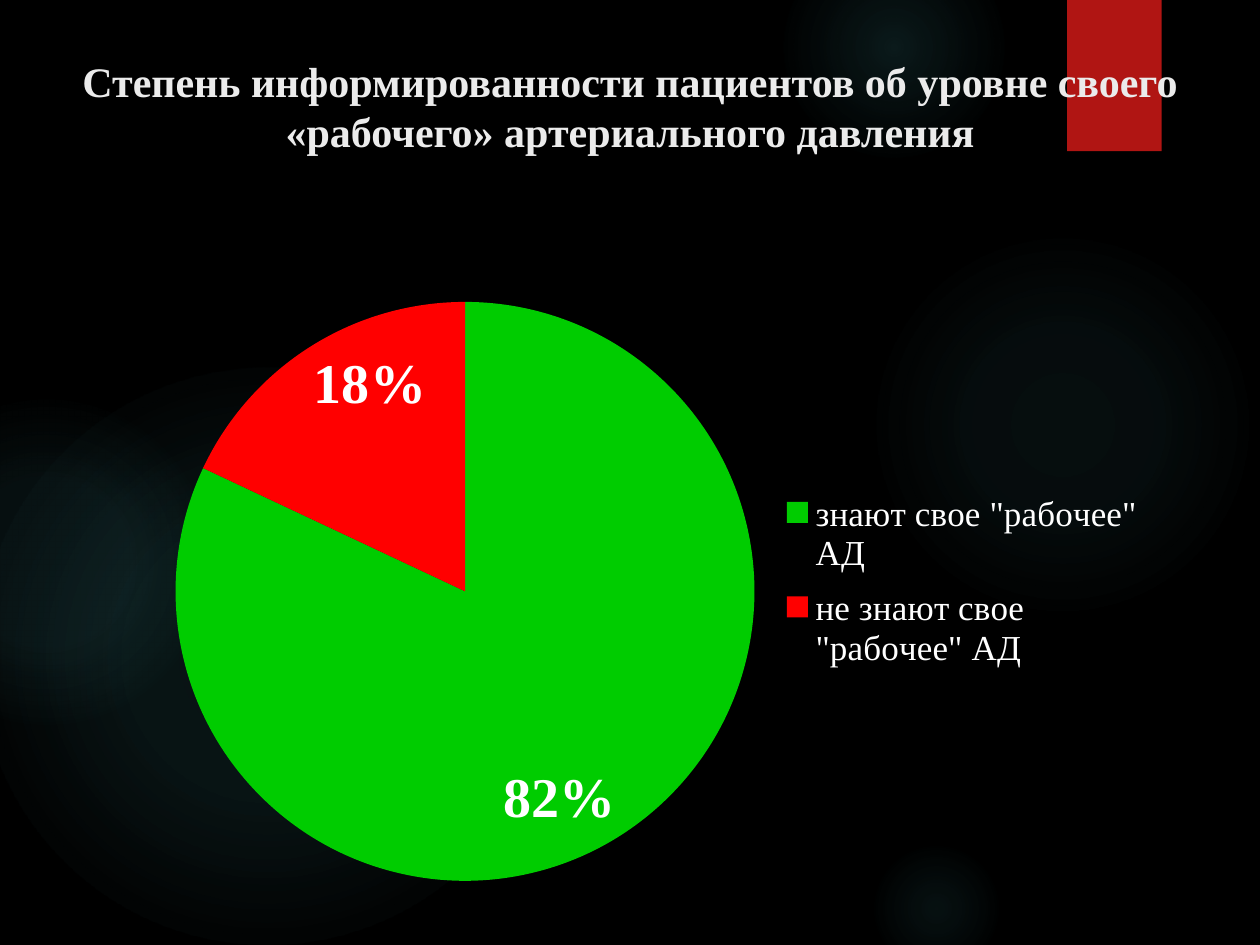
from lxml import etree
from pptx import Presentation
from pptx.chart.data import CategoryChartData
from pptx.dml.color import RGBColor
from pptx.enum.chart import XL_CHART_TYPE as ChartType
from pptx.enum.chart import XL_LABEL_POSITION as LabelPos
from pptx.enum.chart import XL_LEGEND_POSITION as LegendPos
from pptx.enum.shapes import MSO_SHAPE as Shape
from pptx.enum.text import MSO_ANCHOR, PP_ALIGN
from pptx.oxml import parse_xml
from pptx.oxml.ns import nsdecls, qn
from pptx.util import Inches, Pt

BLACK = RGBColor(0x00, 0x00, 0x00)
WHITE = RGBColor(0xFF, 0xFF, 0xFF)
TITLE_GREY = RGBColor(0xEB, 0xEB, 0xEB)
RED_TAB = RGBColor(0xB0, 0x15, 0x13)
GLOW = RGBColor(0x50, 0xB9, 0xC1)
GREEN = RGBColor(0x00, 0xCC, 0x00)
RED = RGBColor(0xFF, 0x00, 0x00)
SERIF = "Times New Roman"
SANS = "TeX Gyre Adventor"

TITLE = "Степень информированности пациентов об уровне своего «рабочего» артериального давления"
SLICES = [
    ('знают свое "рабочее" АД', 82, GREEN),
    ('не знают свое "рабочее" АД', 18, RED),
]
GLOWS = [
    (6.89, 1.83, 3.08, 7, 6, 69),
    (6.22, -0.5, 1.75, 14, 7, 73),
    (6.89, 6.67, 1.08, 9, 5, 66),
    (-0.17, 2.92, 4.58, 11, 10, 75),
    (-0.92, 3.17, 2.58, 8, 8, 72),
]


def set_font(font, color=WHITE, **formats):
    for name, value in formats.items():
        setattr(font, name, value)
    font.color.rgb = color


def add_plain_shape(slide, kind, left, top, width, height):
    sp = slide.shapes.add_shape(kind, Inches(left), Inches(top), Inches(width), Inches(height))
    sp.shadow.inherit = False
    sp.line.fill.background()
    return sp


def add_glow(slide, left, top, size, inner, middle, edge):
    sp = add_plain_shape(slide, Shape.OVAL, left, top, size, size)
    sp.fill.background()
    stops = "".join(
        f'<a:gs pos="{pos * 1000}"><a:srgbClr val="{GLOW}">'
        f'<a:alpha val="{alpha * 1000}"/></a:srgbClr></a:gs>'
        for pos, alpha in [(0, inner), (36, middle), (edge, 0)]
    )
    gradient = parse_xml(
        f'<a:gradFill {nsdecls("a")}><a:gsLst>{stops}</a:gsLst><a:path path="circle">'
        '<a:fillToRect l="50000" t="50000" r="50000" b="50000"/></a:path></a:gradFill>'
    )
    sp_pr = sp._element.spPr
    sp_pr.replace(sp_pr.find(qn("a:noFill")), gradient)


def add_red_tab(slide):
    sp = add_plain_shape(slide, Shape.RECTANGLE, 8.47, 0, 0.75, 1.2)
    sp.fill.solid()
    sp.fill.fore_color.rgb = RED_TAB


def set_layout(element, before, inner=False, **box):
    for old in element.findall(qn("c:layout")):
        element.remove(old)
    layout = etree.Element(qn("c:layout"))
    manual = etree.SubElement(layout, qn("c:manualLayout"))
    values = {"layoutTarget": "inner"} if inner else {}
    values.update(xMode="edge", yMode="edge", **box)
    for name, value in values.items():
        etree.SubElement(manual, qn(f"c:{name}")).set("val", str(value))
    element.find(qn(before)).addprevious(layout)


def add_pie(slide):
    data = CategoryChartData()
    data.categories = [name for name, _, _ in SLICES]
    data.add_series("Series 1", [value for _, value, _ in SLICES])
    chart = slide.shapes.add_chart(
        ChartType.PIE, Inches(0.7), Inches(1.87), Inches(8.67), Inches(5.23), data
    ).chart
    chart.has_title = False
    set_font(chart.font, size=Pt(10), name=SANS)

    chart.has_legend = True
    legend = chart.legend
    legend.position = LegendPos.RIGHT
    legend.include_in_layout = False
    set_font(legend.font, size=Pt(20), name=SERIF)

    plot = chart.plots[0]
    plot.vary_by_categories = True
    for i, (_, _, color) in enumerate(SLICES):
        fmt = plot.series[0].points[i].format
        fmt.fill.solid()
        fmt.fill.fore_color.rgb = color
        fmt.line.fill.background()

    labels = plot.series[0].data_labels
    formats = {
        "show_percentage": True,
        "show_value": False,
        "number_format": "0%",
        "number_format_is_linked": False,
        "position": LabelPos.INSIDE_END,
    }
    for name, value in formats.items():
        setattr(labels, name, value)
    set_font(labels.font, size=Pt(32), bold=True, name=SERIF)

    area = chart._chartSpace.chart.plotArea
    set_layout(area, "c:pieChart", True, x=0.08, y=0.1, w=0.53, h=0.88)
    set_layout(legend._element, "c:overlay", x=0.62, y=0.37, w=0.36, h=0.31)


def add_title(slide):
    sp = slide.shapes.title
    box = {"left": 0, "top": 0.39, "width": 10, "height": 1.21}
    for name, value in box.items():
        setattr(sp, name, Inches(value))
    tf = sp.text_frame
    tf.word_wrap = True
    tf.vertical_anchor = MSO_ANCHOR.TOP
    p = tf.paragraphs[0]
    p.alignment = PP_ALIGN.CENTER
    r = p.add_run()
    r.text = TITLE
    set_font(r.font, TITLE_GREY, size=Pt(24), bold=True, name=SERIF)
    slide.shapes._spTree.append(sp._element)


def main():
    prs = Presentation()
    prs.slide_width, prs.slide_height = Inches(10), Inches(7.5)
    slide = prs.slides.add_slide(prs.slide_layouts[5])
    slide.background.fill.solid()
    slide.background.fill.fore_color.rgb = BLACK
    for glow in GLOWS:
        add_glow(slide, *glow)
    add_red_tab(slide)
    add_pie(slide)
    add_title(slide)
    prs.save("out.pptx")


if __name__ == "__main__":
    main()
